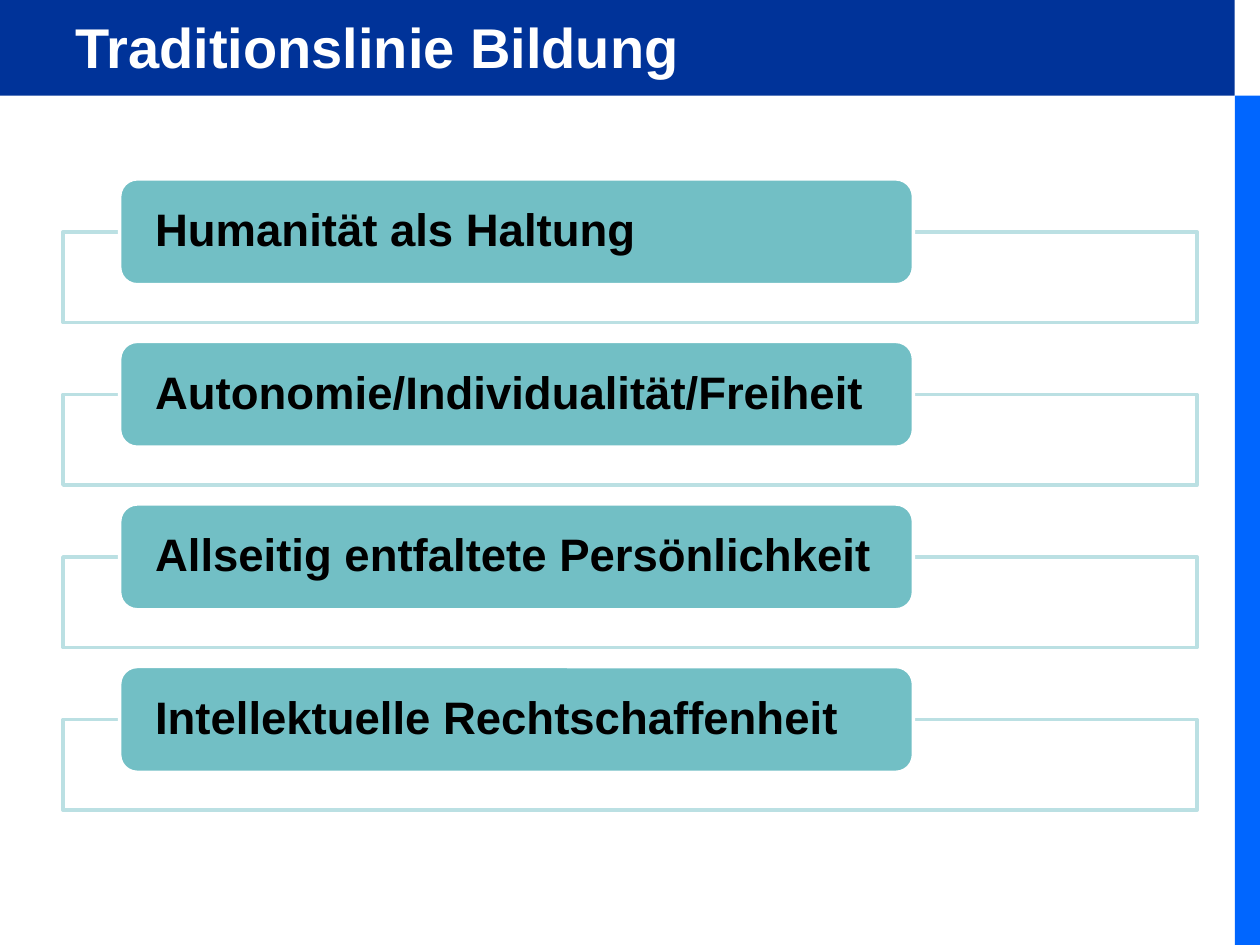
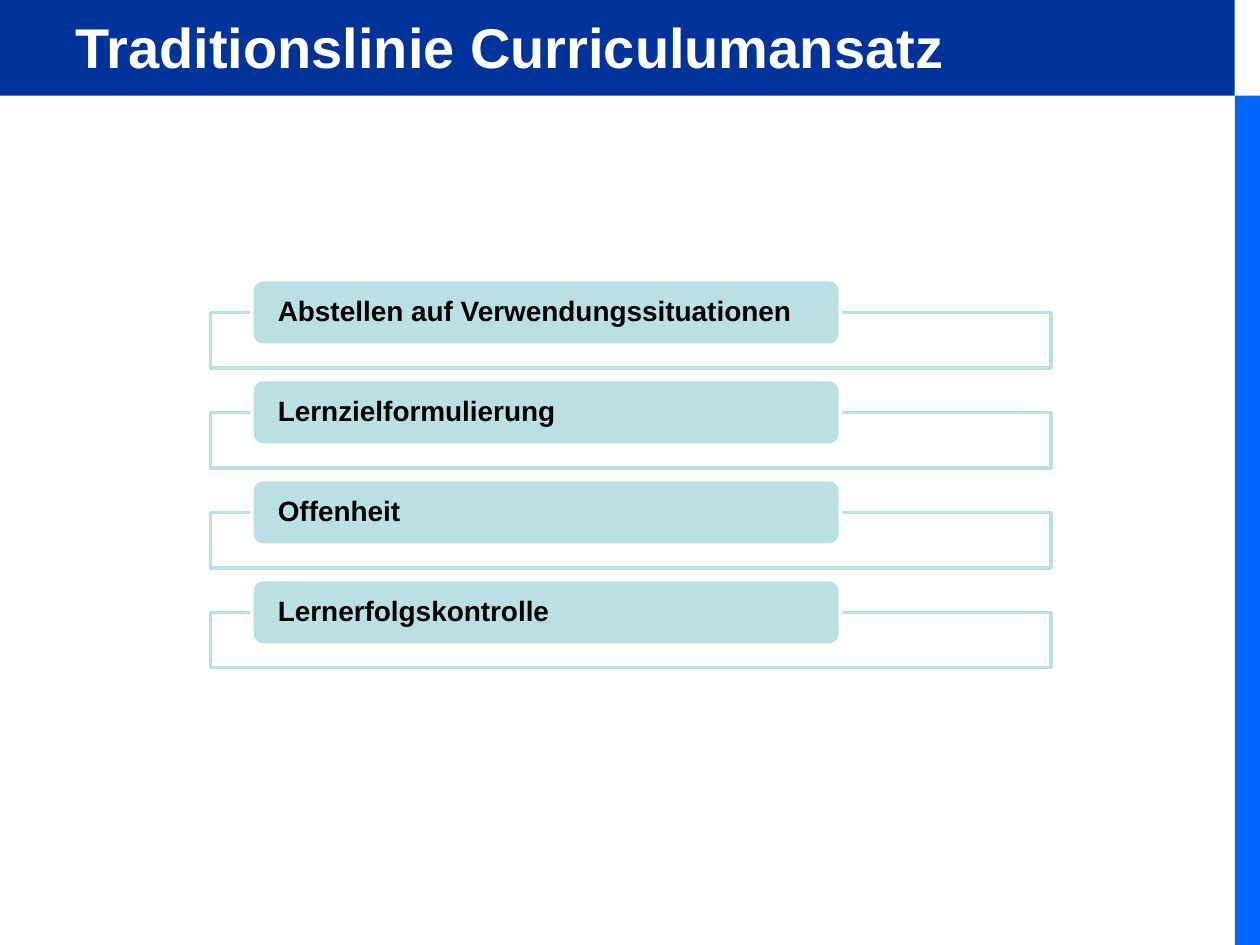
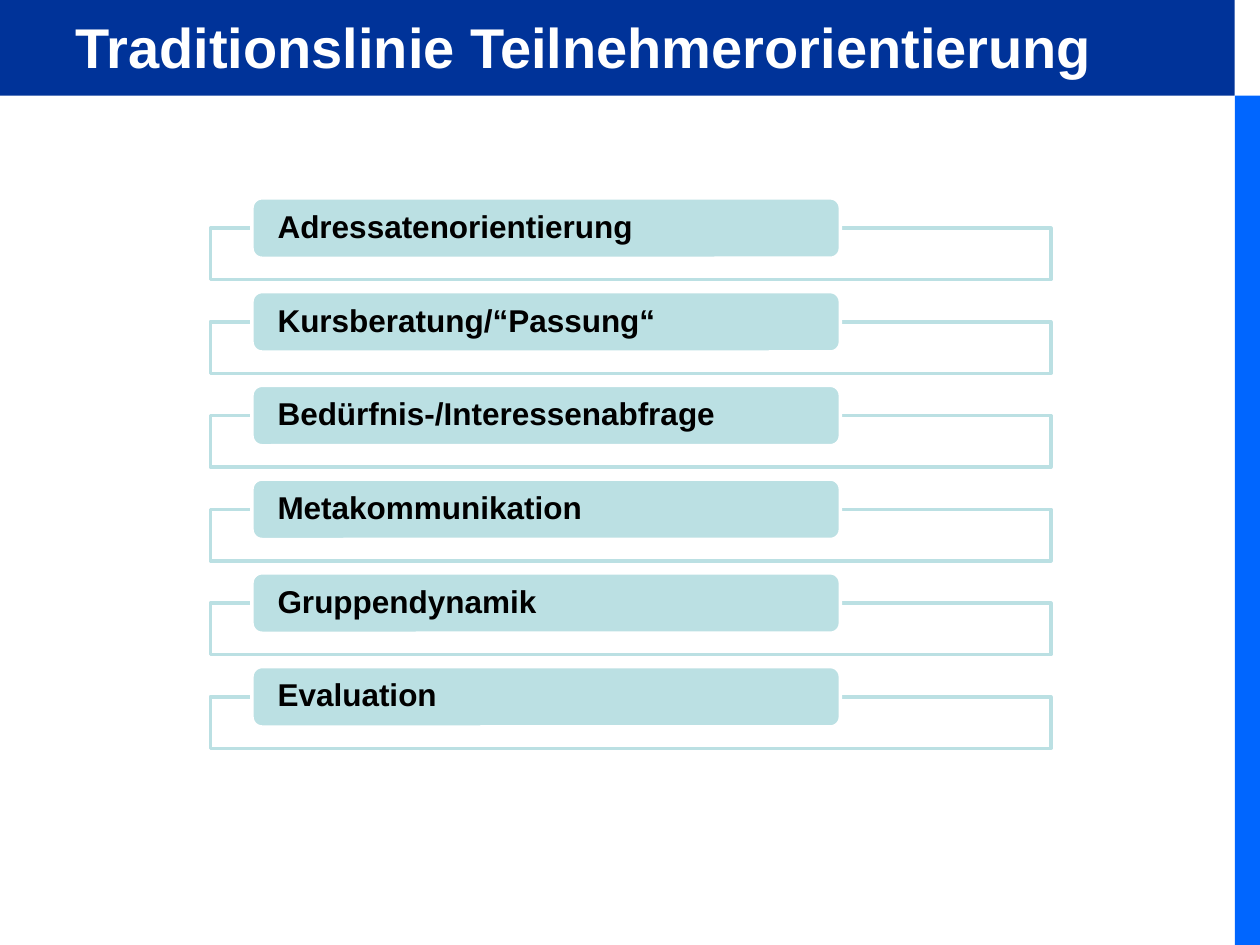
from pptx import Presentation
from pptx.dml.color import RGBColor
from pptx.enum.shapes import MSO_SHAPE
from pptx.enum.text import MSO_ANCHOR, PP_ALIGN
from pptx.util import Inches, Pt

RECT = MSO_SHAPE.RECTANGLE
ROUND = MSO_SHAPE.ROUNDED_RECTANGLE
MIDDLE = MSO_ANCHOR.MIDDLE
TOP = MSO_ANCHOR.TOP
LEFT = PP_ALIGN.LEFT

FONT = "Arial"
COLORS = {
    "band": "003399",
    "side": "0066FF",
    "teal": "72BFC5",
    "pale": "BBE0E3",
    "white": "FFFFFF",
    "black": "000000",
}

# Frame and label: left edge and width; label height and inset
WIDE = {"frame": (0.5, 9), "label": (0.95, 6.3), "high": 0.84, "drop": 0.72,
        "inset": 0.24, "size": 26, "fill": "teal"}
SLIM = {"frame": (1.67, 6.67), "label": (2, 4.67), "high": 0.52, "drop": 0.44,
        "inset": 0.18, "size": 16, "fill": "pale"}
DENSE = {**SLIM, "high": 0.48, "drop": 0.41, "size": 18}

# Title, style, top of the first label, top of the last label, labels
SLIDES = [
    ("Traditionslinie Bildung", WIDE, 1.42, 5.29, [
        "Humanität als Haltung",
        "Autonomie/Individualität/Freiheit",
        "Allseitig entfaltete Persönlichkeit",
        "Intellektuelle Rechtschaffenheit",
    ]),
    ("Traditionslinie Curriculumansatz", SLIM, 2.22, 4.6, [
        "Abstellen auf Verwendungssituationen",
        "Lernzielformulierung",
        "Offenheit",
        "Lernerfolgskontrolle",
    ]),
    ("Traditionslinie Teilnehmerorientierung", DENSE, 1.57, 5.29, [
        "Adressatenorientierung",
        "Kursberatung/“Passung“",
        "Bedürfnis-/Interessenabfrage",
        "Metakommunikation",
        "Gruppendynamik",
        "Evaluation",
    ]),
]


def color(name):
    return RGBColor.from_string(COLORS[name])


def add_box(slide, kind, x, y, w, h, fill, line=None):
    box = slide.shapes.add_shape(kind, Inches(x), Inches(y), Inches(w), Inches(h))
    box.shadow.inherit = False
    box.fill.solid()
    box.fill.fore_color.rgb = color(fill)
    if line:
        box.line.color.rgb = color(line)
        box.line.width = Pt(2)
    else:
        box.line.fill.background()
    return box


def write(shape, text, size, ink, inset, top, anchor):
    """Put one bold, left-aligned line of text into the shape."""
    frame = shape.text_frame
    frame.word_wrap = True
    frame.vertical_anchor = anchor
    frame.margin_left = frame.margin_right = Inches(inset)
    frame.margin_top = Inches(top)
    frame.margin_bottom = 0
    frame.text = text
    para = frame.paragraphs[0]
    para.alignment = LEFT
    font = para.runs[0].font
    font.name = FONT
    font.size = Pt(size)
    font.bold = True
    font.color.rgb = color(ink)
    return para


def add_base(deck, title):
    """Add a slide with the bands and the title."""
    slide = deck.slides.add_slide(deck.slide_layouts[6])
    add_box(slide, RECT, 9.8, 0.76, 0.2, 6.74, "side")
    add_box(slide, RECT, 0, 0, 9.8, 0.76, "band")
    head = slide.shapes.add_textbox(Inches(0.5), 0, Inches(9), Inches(0.78))
    write(head, title, 32, "white", 0.1, 0.1, TOP)
    return slide


def add_item(slide, text, y, style):
    """Add a label whose middle lies on the top edge of its frame."""
    high = style["high"]
    x, w = style["frame"]
    add_box(slide, RECT, x, y + high / 2, w, style["drop"], "white", "pale")
    x, w = style["label"]
    label = add_box(slide, ROUND, x, y, w, high, style["fill"], "white")
    para = write(label, text, style["size"], "black", style["inset"], 0, MIDDLE)
    para.line_spacing = 0.9


def add_list(slide, items, first, last, style):
    step = (last - first) / (len(items) - 1)
    for i, text in enumerate(items):
        add_item(slide, text, first + i * step, style)


def main():
    deck = Presentation()
    deck.slide_width = Inches(10)
    deck.slide_height = Inches(7.5)
    for title, style, first, last, items in SLIDES:
        slide = add_base(deck, title)
        add_list(slide, items, first, last, style)
    deck.save("out.pptx")


if __name__ == "__main__":
    main()
